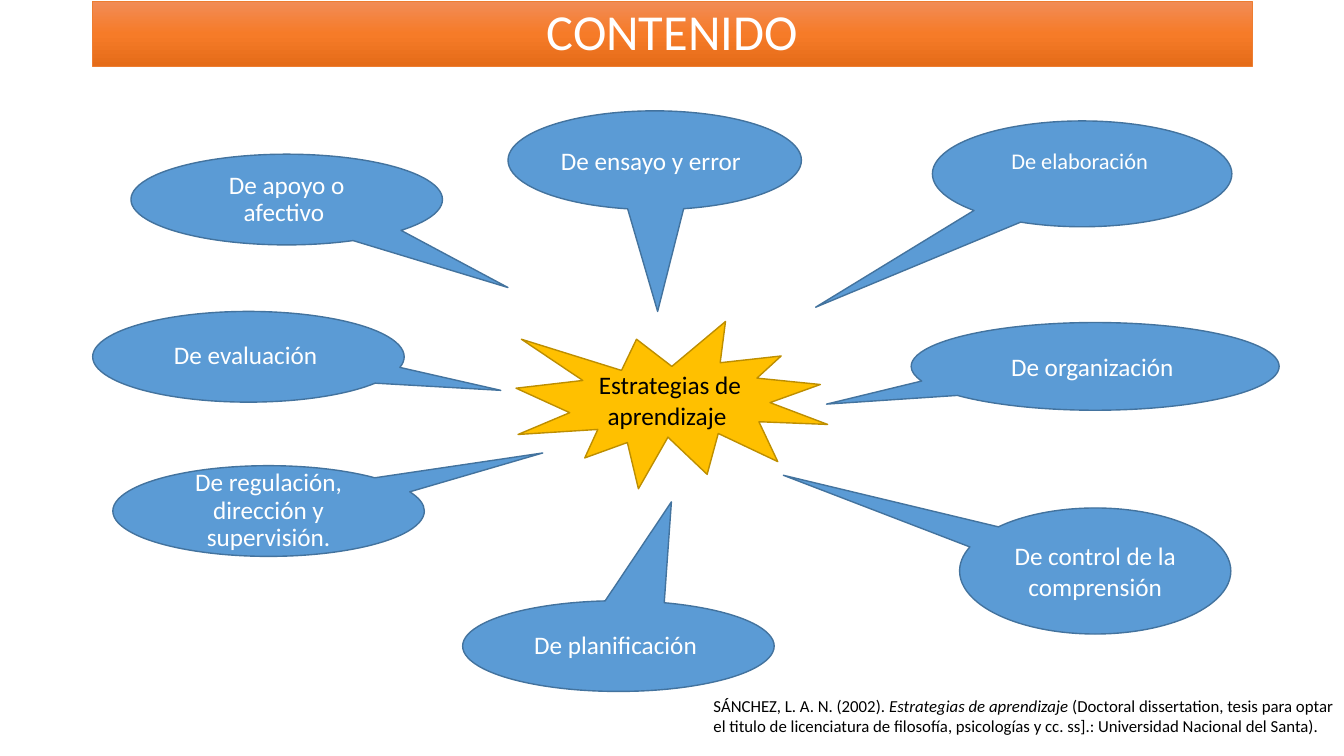
import copy
import dataclasses
import pptx
import pptx.dml.color
import pptx.enum.shapes
import pptx.enum.text
import pptx.oxml.ns
import pptx.util

ALIGN = pptx.enum.text.PP_ALIGN
SHAPE = pptx.enum.shapes.MSO_SHAPE


@dataclasses.dataclass(frozen=True)
class Theme:
    font: str = "Calibri"
    white: str = "FFFFFF"
    black: str = "000000"
    callout: str = "5B9BD5"
    callout_line: str = "43739E"
    burst: str = "FFC000"
    burst_line: str = "BD8E00"
    banner: tuple = ("F18C57", "F67B28", "E56C19")
    banner_line: str = "ED7D31"
    title_size: int = 36
    label_size: int = 18
    small_label_size: int = 16
    citation_size: int = 12


@dataclasses.dataclass(frozen=True)
class Box:
    left: float
    top: float
    width: float
    height: float

    def share(self, left, top, width, height):
        return Box(
            self.left + self.width * left / 100,
            self.top + self.height * top / 100,
            self.width * width / 100,
            self.height * height / 100,
        )

    def lengths(self):
        return [pptx.util.Inches(value) for value in dataclasses.astuple(self)]


THEME = Theme()
SLIDE_BOX = Box(0, 0, 13.33, 7.5)
SIDE_WIDTH, SIDE_HEIGHT = 23.18, 12

STRATEGIES = [
    ("De ensayo y error", (37.8, 14.67, 21.83, 13.07), (0.01, 1.53), {"align": ALIGN.LEFT}),
    ("De organización ", (67.8, 42.67, 27.38, 11.6), (-0.73, 0.43), {}),
    ("De control de la comprensión", (71.4, 67.2, 20.18, 16.67), (-1.15, -0.76), {}),
    ("De elaboración ", (69.38, 16, 22.28, 14), (-0.89, 1.26),
     {"size": THEME.small_label_size, "bottom_inset": 0.32}),
]
SUPPORT_STRATEGIES = [
    ("De planificación ", (34.43, 79.47), (0.17, -1.59)),
    ("De regulación, dirección y supervisión.", (8.4, 61.6), (0.88, -0.64)),
    ("De evaluación ", (6.9, 41.2), (0.81, 0.37)),
    ("De apoyo o afectivo ", (9.75, 20.4), (0.71, 0.97)),
]
CITATION = [
    ("SÁNCHEZ, L. A. N. (2002). ", False),
    ("Estrategias de aprendizaje", True),
    (" (Doctoral dissertation, tesis para optar el titulo de licenciatura de filosofía, "
     "psicologías y cc. ss].: Universidad Nacional del Santa).", False),
]


def rgb(value):
    return pptx.dml.color.RGBColor.from_string(value)


def write_text(shape, pieces, *, size=THEME.label_size, color=THEME.white,
               align=ALIGN.CENTER, anchor=pptx.enum.text.MSO_ANCHOR.MIDDLE,
               line_spacing=1.0, space_before=0, bottom_inset=0.05):
    frame = shape.text_frame
    frame.word_wrap = True
    frame.auto_size = pptx.enum.text.MSO_AUTO_SIZE.NONE
    frame.vertical_anchor = anchor
    frame.margin_left = frame.margin_right = pptx.util.Inches(0.1)
    frame.margin_top = pptx.util.Inches(0.05)
    frame.margin_bottom = pptx.util.Inches(bottom_inset)
    paragraph = frame.paragraphs[0]
    paragraph.alignment = align
    paragraph.line_spacing = line_spacing
    paragraph.space_before = pptx.util.Pt(space_before)
    for text, italic in pieces:
        run = paragraph.add_run()
        run.text = text
        run.font.name = THEME.font
        run.font.size = pptx.util.Pt(size)
        run.font.italic = italic
        run.font.color.rgb = rgb(color)


def add_outlined(slide, kind, box, fill, line):
    shape = slide.shapes.add_shape(kind, *box.lengths())
    shape.shadow.inherit = False
    shape.fill.solid()
    shape.fill.fore_color.rgb = rgb(fill)
    shape.line.color.rgb = rgb(line)
    shape.line.width = pptx.util.Pt(1)
    return shape


def add_banner(slide, box):
    title = slide.shapes.title
    title.left, title.top, title.width, title.height = box.lengths()
    title.fill.gradient()
    title.fill.gradient_angle = 270
    stop_list = title.element.spPr.find(".//" + pptx.oxml.ns.qn("a:gsLst"))
    stop_list.insert(1, copy.deepcopy(stop_list[0]))
    for index, stop in enumerate(title.fill.gradient_stops):
        stop.position = index / 2
        stop.color.rgb = rgb(THEME.banner[index])
    title.line.color.rgb = rgb(THEME.banner_line)
    title.line.width = pptx.util.Pt(0.5)
    write_text(title, [("CONTENIDO", False)], size=THEME.title_size, line_spacing=0.9)


def add_callout(slide, box, text, tip, **text_format):
    callout = add_outlined(slide, SHAPE.OVAL_CALLOUT, box, THEME.callout, THEME.callout_line)
    for index, offset in enumerate(tip):
        callout.adjustments[index] = offset
    write_text(callout, [(text, False)], **text_format)


def add_strategy_map(slide, box):
    for text, place, tip, text_format in STRATEGIES:
        add_callout(slide, box.share(*place), text, tip, **text_format)
    for text, corner, tip in SUPPORT_STRATEGIES:
        add_callout(slide, box.share(*corner, SIDE_WIDTH, SIDE_HEIGHT), text, tip,
                    line_spacing=0.9, space_before=10)
    burst = add_outlined(slide, SHAPE.EXPLOSION1,
                         box.share(38.4, 42.53, SIDE_WIDTH, 22.13),
                         THEME.burst, THEME.burst_line)
    write_text(burst, [("Estrategias de aprendizaje ", False)], color=THEME.black)


def add_citation(slide, box):
    citation = slide.shapes.add_textbox(*box.lengths())
    write_text(citation, CITATION, size=THEME.citation_size, color=THEME.black,
               align=ALIGN.LEFT, anchor=pptx.enum.text.MSO_ANCHOR.TOP)


def main():
    presentation = pptx.Presentation()
    presentation.slide_width = pptx.util.Inches(SLIDE_BOX.width)
    presentation.slide_height = pptx.util.Inches(SLIDE_BOX.height)
    slide = presentation.slides.add_slide(presentation.slide_layouts.get_by_name("Title Only"))
    add_banner(slide, SLIDE_BOX.share(6.9, 0.13, 86.25, 8.67))
    add_strategy_map(slide, SLIDE_BOX)
    add_citation(slide, SLIDE_BOX.share(52.35, 91.33, 48.45, 6.67))
    presentation.save("out.pptx")


if __name__ == "__main__":
    main()
